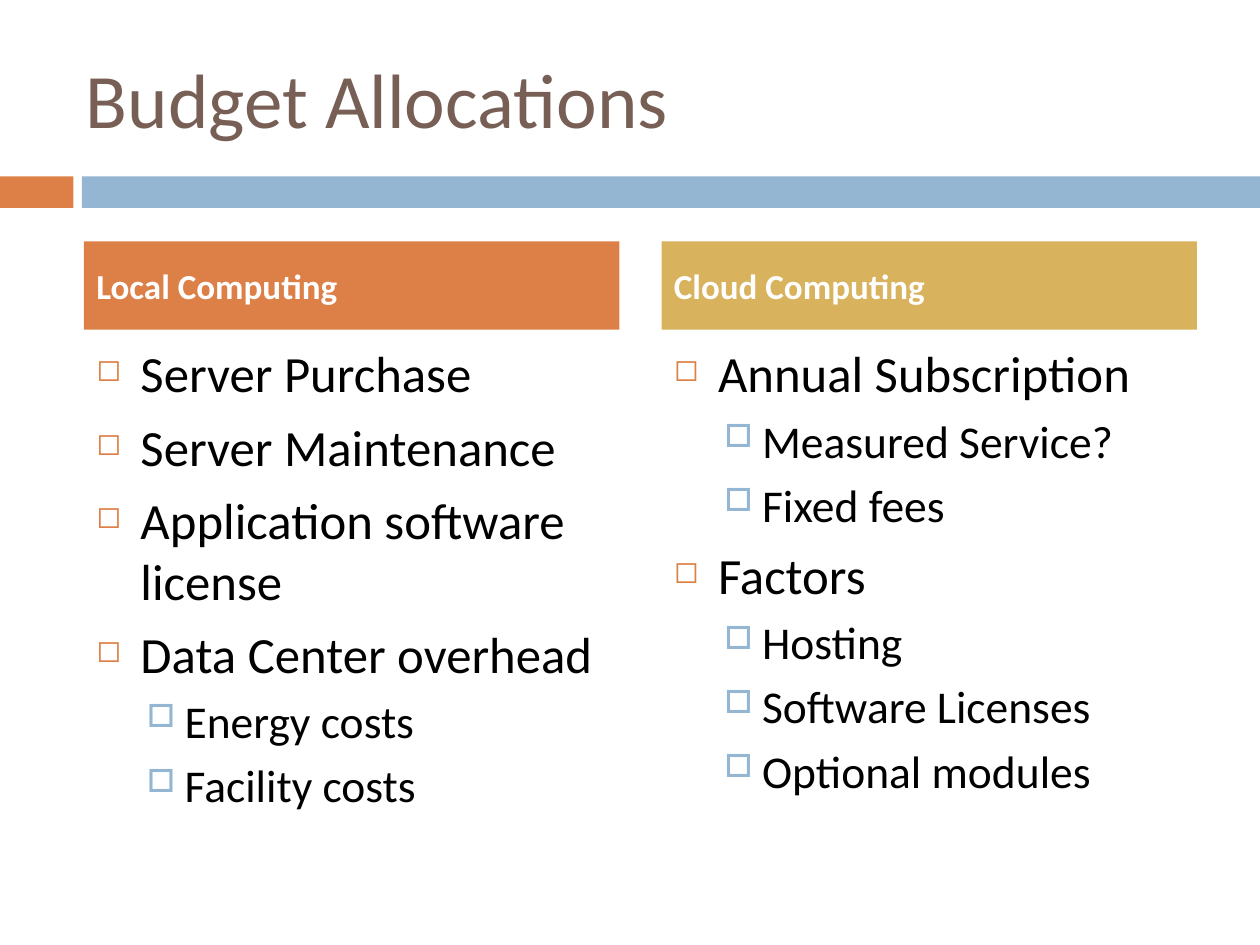
from lxml.etree import SubElement
from pptx import Presentation
from pptx.dml.color import RGBColor
from pptx.enum.shapes import MSO_SHAPE
from pptx.enum.text import MSO_ANCHOR, PP_ALIGN
from pptx.oxml.ns import qn
from pptx.util import Pt

ORANGE = RGBColor(0xDD, 0x80, 0x47)
BLUE = RGBColor(0x94, 0xB6, 0xD2)
GOLD = RGBColor(0xD8, 0xB2, 0x5C)
BROWN = RGBColor(0x77, 0x5F, 0x55)
BLACK = RGBColor(0, 0, 0)
WHITE = RGBColor(0xFF, 0xFF, 0xFF)

# Text format and bullet (char, colour, size %, left margin, hanging indent) by level
LEVELS = [
    (dict(size=29, before=7), ("◻", ORANGE, 60, 25.2, 25.2)),
    (dict(size=26, before=5.5), ("□", BLUE, 70, 50.4, 21.6)),
]

prs = Presentation()
prs.slide_width, prs.slide_height = Pt(720), Pt(540)
s = prs.slides.add_slide(prs.slide_layouts[6])


def add_text(tf, text, size=20, color=BLACK, bold=False, before=0, bullet=None):
    """Fill the empty first paragraph, or add one, and format it."""
    p = tf.paragraphs[0] if not tf.text else tf.add_paragraph()
    p.alignment = PP_ALIGN.LEFT
    p.space_before = Pt(before)
    r = p.add_run()
    r.text = text
    r.font.name = "Calibri"
    r.font.size = Pt(size)
    r.font.bold = bold
    r.font.color.rgb = color
    if bullet:
        char, bullet_color, percent, margin, hanging = bullet
        pPr = p._p.get_or_add_pPr()
        pPr.set("marL", str(Pt(margin)))
        pPr.set("indent", str(-Pt(hanging)))
        clr = SubElement(pPr, qn("a:buClr"))
        SubElement(clr, qn("a:srgbClr"), val=str(bullet_color))
        SubElement(pPr, qn("a:buSzPct"), val=str(percent * 1000))
        SubElement(pPr, qn("a:buChar"), char=char)


def add_rect(left, top, width, height, color):
    sp = s.shapes.add_shape(MSO_SHAPE.RECTANGLE, Pt(left), Pt(top), Pt(width), Pt(height))
    sp.shadow.inherit = False
    sp.fill.solid()
    sp.fill.fore_color.rgb = color
    sp.line.fill.background()
    return sp


# Divider band
add_rect(0, 100.8, 42, 18, ORANGE)
add_rect(46.8, 100.8, 673.2, 18, BLUE)

# Title
tf = s.shapes.add_textbox(Pt(42), Pt(21.6), Pt(642), Pt(68.4)).text_frame
tf.word_wrap = True
tf.vertical_anchor = MSO_ANCHOR.MIDDLE
add_text(tf, "Budget Allocations", size=44, color=BROWN)

# Two columns: heading, colour, items as (level, text)
columns = [
    ("Local Computing", ORANGE, [
        (0, "Server Purchase"),
        (0, "Server Maintenance"),
        (0, "Application software license"),
        (0, "Data Center overhead"),
        (1, "Energy costs"),
        (1, "Facility costs"),
    ]),
    ("Cloud Computing", GOLD, [
        (0, "Annual Subscription"),
        (1, "Measured Service?"),
        (1, "Fixed fees"),
        (0, "Factors"),
        (1, "Hosting"),
        (1, "Software Licenses"),
        (1, "Optional modules"),
    ]),
]
for i, (heading, color, items) in enumerate(columns):
    left = 48 + 330 * i

    # Item list
    tf = s.shapes.add_textbox(Pt(left), Pt(192), Pt(306), Pt(282)).text_frame
    tf.word_wrap = True
    for level, text in items:
        text_format, bullet = LEVELS[level]
        add_text(tf, text, bullet=bullet, **text_format)
        tf.paragraphs[-1].level = level

    # Column heading
    tf = add_rect(left, 138, 306, 50.4, color).text_frame
    tf.word_wrap = True
    tf.vertical_anchor = MSO_ANCHOR.MIDDLE
    add_text(tf, heading, color=WHITE, bold=True, before=7)

prs.save("out.pptx")
